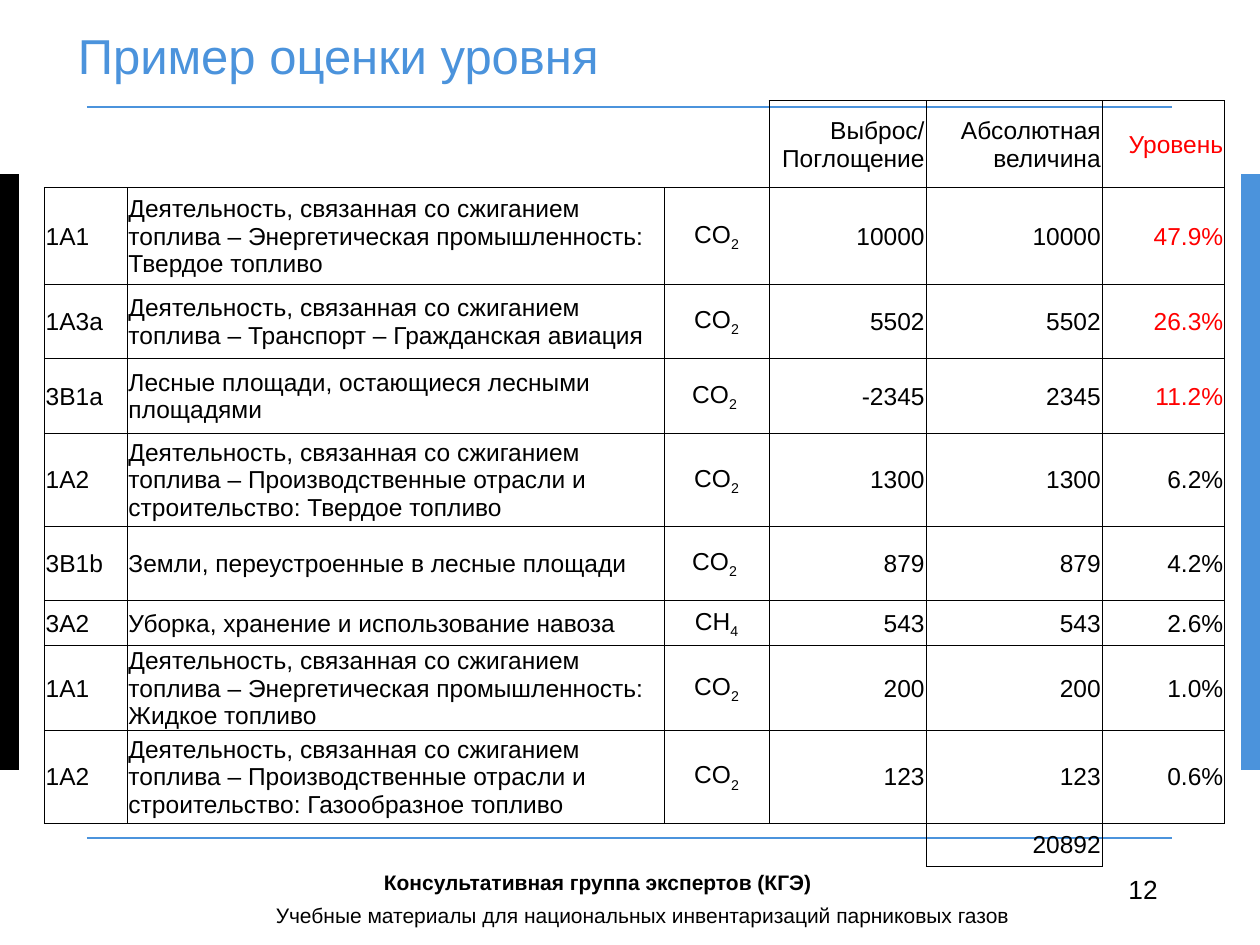
from dataclasses import dataclass
from typing import NamedTuple

from lxml import etree
from pptx import Presentation
from pptx import util as u
from pptx.dml.color import RGBColor
from pptx.enum import shapes, text
from pptx.oxml import ns


@dataclass(frozen=True)
class Theme:
    font: str = "Arial"
    black: RGBColor = RGBColor(0, 0, 0)
    blue: RGBColor = RGBColor(0x4B, 0x93, 0xDC)
    red: RGBColor = RGBColor(0xFF, 0, 0)
    title_size: int = 28
    table_size: int = 14
    number_size: int = 15
    footer_size: int = 12
    rule_width: float = 1
    border_width: float = 0.5


class Category(NamedTuple):
    code: str
    activity: str
    gas: str
    subscript: str
    emission: int
    level: str
    is_key: bool = False

    def row(self) -> list[str]:
        return [self.code, self.activity, self.gas, str(self.emission),
                str(abs(self.emission)), self.level]


class Footer(NamedTuple):
    words: str
    left: float
    top: float
    width: float
    height: float
    size: int
    bold: bool = False


THEME = Theme()
FUEL = "Деятельность, связанная со сжиганием топлива – "
ENERGY = FUEL + "Энергетическая промышленность: "
INDUSTRY = FUEL + "Производственные отрасли и строительство: "
CATEGORIES = [
    Category("1A1", ENERGY + "Твердое топливо", "CO", "2", 10000, "47.9%", True),
    Category("1A3a", FUEL + "Транспорт – Гражданская авиация", "CO", "2", 5502, "26.3%", True),
    Category("3B1a", "Лесные площади, остающиеся лесными площадями", "CO", "2 ", -2345,
             "11.2%", True),
    Category("1A2", INDUSTRY + "Твердое топливо", "CO", "2", 1300, "6.2%"),
    Category("3B1b", "Земли, переустроенные в лесные площади", "CO", "2 ", 879, "4.2%"),
    Category("3A2", "Уборка, хранение и использование навоза", "CH", "4", 543, "2.6%"),
    Category("1A1", ENERGY + "Жидкое топливо", "CO", "2", 200, "1.0%"),
    Category("1A2", INDUSTRY + "Газообразное топливо", "CO", "2", 123, "0.6%"),
]
HEADER = ["", "", "", "Выброс/ Поглощение", "Абсолютная величина", "Уровень"]
TOTAL = ["", "", "", "", str(sum(abs(c.emission) for c in CATEGORIES)), ""]
GAS_COLUMN, LEVEL_COLUMN = 2, 5
COLUMN_WIDTHS = [1.67, 10.83, 2.11, 3.17, 3.55, 2.47]
ROW_HEIGHTS = [1.75, 1.95, 1.5, 1.5, 1.88, 1.5, 0.91, 1.32, 1.88, 0.86]
LEFT, CENTER, RIGHT = text.PP_ALIGN.LEFT, text.PP_ALIGN.CENTER, text.PP_ALIGN.RIGHT
ALIGNMENTS = [LEFT, LEFT, CENTER, RIGHT, RIGHT, RIGHT]
# Side of a cell -> row and column step to the neighbour across it
SIDES = {"lnL": (0, -1), "lnR": (0, 1), "lnT": (-1, 0), "lnB": (1, 0)}
FOOTERS = [
    Footer("12", 22.5, 17.48, 1.2, 0.89, THEME.number_size),
    Footer("Учебные материалы для национальных инвентаризаций парниковых газов",
           5.31, 18.06, 16.56, 0.91, THEME.footer_size),
    Footer("Консультативная группа экспертов (КГЭ)",
           7.49, 17.4, 11.61, 0.99, THEME.footer_size, True),
]


def set_font(paragraph, size: float, color: RGBColor, bold: bool = False) -> None:
    font = paragraph.font
    font.name, font.size, font.bold = THEME.font, u.Pt(size), bold
    font.color.rgb = color


def add_side_bar(slide, left: float, color: RGBColor) -> None:
    bar = slide.shapes.add_shape(shapes.MSO_SHAPE.RECTANGLE, u.Cm(left), u.Cm(3.51),
                                 u.Cm(0.38), u.Cm(12.01))
    bar.shadow.inherit = False
    bar.fill.solid()
    bar.fill.fore_color.rgb = color
    bar.line.fill.background()


def add_rule(slide, top: float) -> None:
    rule = slide.shapes.add_connector(shapes.MSO_CONNECTOR.STRAIGHT, u.Cm(1.75), u.Cm(top),
                                      u.Cm(23.62), u.Cm(top))
    rule.line.color.rgb = THEME.blue
    rule.line.width = u.Pt(THEME.rule_width)
    etree.SubElement(rule._element.spPr, ns.qn("a:effectLst"))


def set_title(slide) -> None:
    title = slide.shapes.title
    title.left, title.top = u.Cm(1.57), u.Cm(0.74)
    title.width, title.height = u.Cm(22), u.Cm(1.4)
    frame = title.text_frame
    frame.text = "Пример оценки уровня"
    frame.auto_size = text.MSO_AUTO_SIZE.NONE
    frame.vertical_anchor = text.MSO_ANCHOR.MIDDLE
    frame.margin_left = frame.margin_right = frame.margin_top = frame.margin_bottom = 0
    paragraph = frame.paragraphs[0]
    paragraph.alignment = LEFT
    paragraph.line_spacing = u.Pt(15)
    set_font(paragraph, THEME.title_size, THEME.blue)


def set_borders(cell, rows: list[list[str]], r: int, c: int) -> None:
    """Rule each side that touches a filled cell; leave the others bare."""
    properties = cell._tc.get_or_add_tcPr()
    for index, (tag, (down, across)) in enumerate(SIDES.items()):
        y, x = r + down, c + across
        inside = 0 <= y < len(rows) and 0 <= x < len(rows[0])
        ruled = rows[r][c] or (inside and rows[y][x])
        border = etree.Element(ns.qn(f"a:{tag}"), w=str(u.Pt(THEME.border_width)))
        if ruled:
            fill = etree.SubElement(border, ns.qn("a:solidFill"))
            etree.SubElement(fill, ns.qn("a:srgbClr"), val=str(THEME.black))
        else:
            etree.SubElement(border, ns.qn("a:noFill"))
        properties.insert(index, border)


def add_level_table(slide) -> None:
    rows = [HEADER, *(category.row() for category in CATEGORIES), TOTAL]
    red_rows = {0} | {i for i, category in enumerate(CATEGORIES, 1) if category.is_key}
    table = slide.shapes.add_table(len(rows), len(HEADER), u.Cm(0.89), u.Cm(2.03),
                                   u.Cm(sum(COLUMN_WIDTHS)), u.Cm(sum(ROW_HEIGHTS))).table
    table.first_row = table.horz_banding = False
    for column, width in zip(table.columns, COLUMN_WIDTHS):
        column.width = u.Cm(width)
    for r, (row, height) in enumerate(zip(rows, ROW_HEIGHTS)):
        table.rows[r].height = u.Cm(height)
        for c, words in enumerate(row):
            cell = table.cell(r, c)
            cell.fill.background()
            set_borders(cell, rows, r, c)
            cell.margin_left = cell.margin_right = cell.margin_top = u.Cm(0.03)
            cell.margin_bottom = 0
            cell.vertical_anchor = text.MSO_ANCHOR.MIDDLE
            paragraph = cell.text_frame.paragraphs[0]
            paragraph.alignment = ALIGNMENTS[c]
            is_red = c == LEVEL_COLUMN and r in red_rows
            set_font(paragraph, THEME.table_size, THEME.red if is_red else THEME.black)
            if words:
                paragraph.add_run().text = words
            if words and c == GAS_COLUMN:
                subscript = paragraph.add_run()
                subscript.text = CATEGORIES[r - 1].subscript
                subscript.font._element.set("baseline", "-25000")


def add_footer(slide, footer: Footer) -> None:
    box = slide.shapes.add_textbox(u.Cm(footer.left), u.Cm(footer.top),
                                   u.Cm(footer.width), u.Cm(footer.height))
    box.text_frame.word_wrap = True
    box.text_frame.text = footer.words
    set_font(box.text_frame.paragraphs[0], footer.size, THEME.black, footer.bold)


def main() -> None:
    deck = Presentation()
    deck.slide_width, deck.slide_height = u.Cm(25.4), u.Cm(19.05)
    slide = deck.slides.add_slide(deck.slide_layouts[5])
    add_side_bar(slide, 0, THEME.black)
    add_side_bar(slide, 25.02, THEME.blue)
    for top in (2.16, 16.89):
        add_rule(slide, top)
    add_level_table(slide)
    set_title(slide)
    for footer in FOOTERS:
        add_footer(slide, footer)
    deck.save("out.pptx")


if __name__ == "__main__":
    main()
